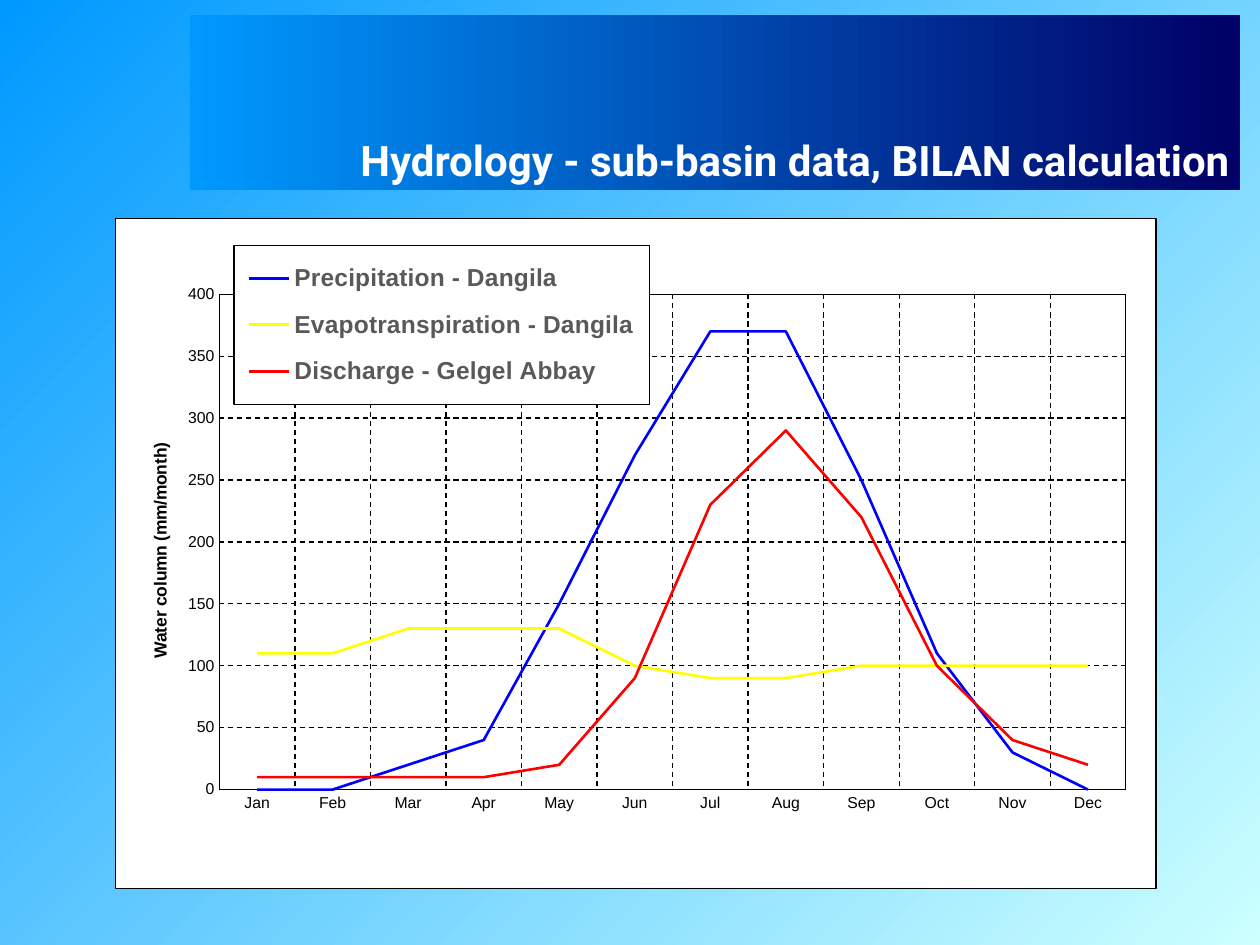
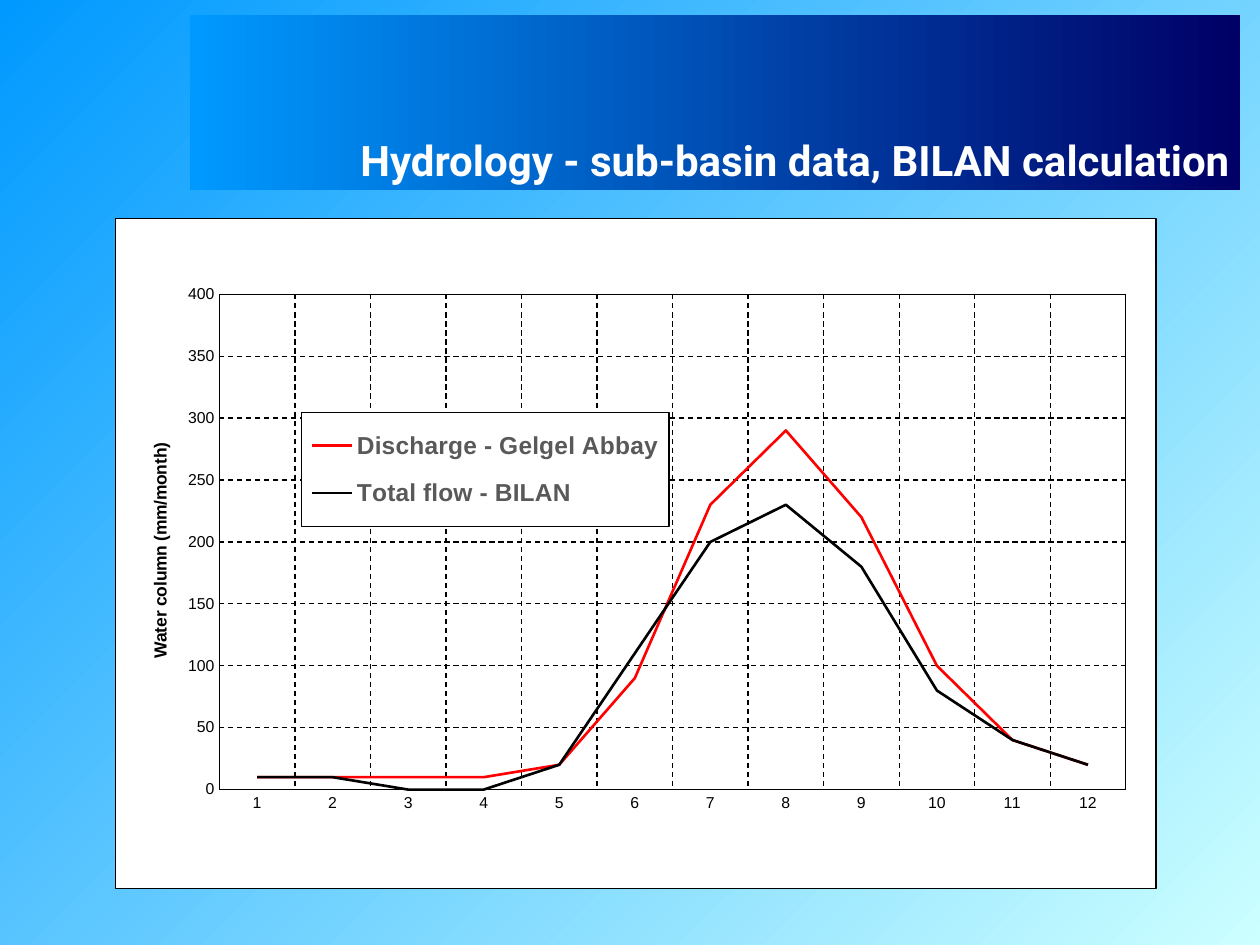
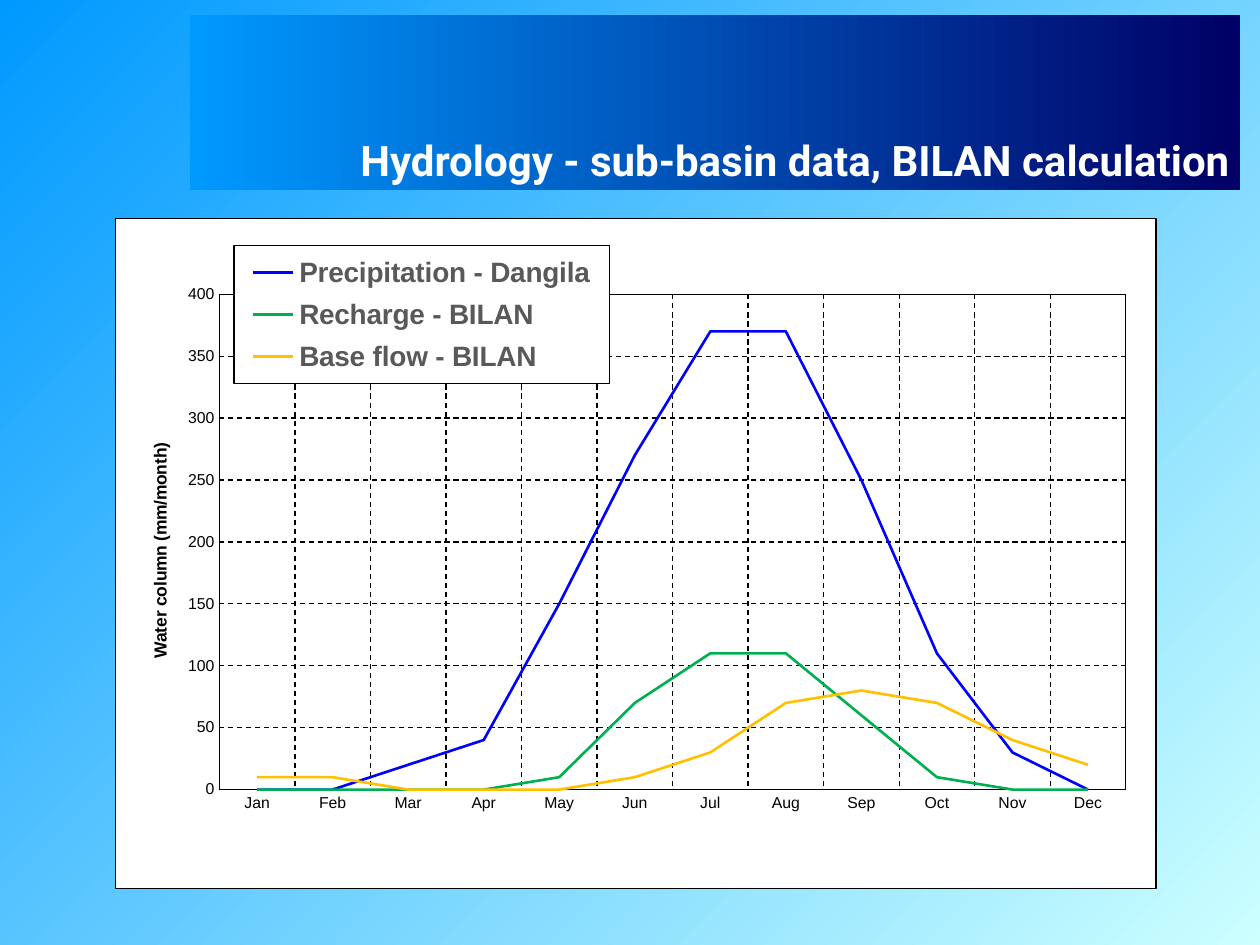
from dataclasses import dataclass

from pptx import Presentation
from pptx.chart.data import CategoryChartData
from pptx.dml.color import RGBColor
from pptx.enum.chart import XL_CHART_TYPE, XL_LEGEND_POSITION, XL_TICK_MARK
from pptx.enum.dml import MSO_LINE
from pptx.enum.shapes import MSO_SHAPE
from pptx.enum.text import MSO_ANCHOR, PP_ALIGN
from pptx.oxml import parse_xml
from pptx.oxml.ns import nsdecls
from pptx.util import Pt

LINE_CHART = XL_CHART_TYPE.LINE
LEGEND_BOTTOM = XL_LEGEND_POSITION.BOTTOM
NO_TICK = XL_TICK_MARK.NONE
DASH = MSO_LINE.DASH
RECT = MSO_SHAPE.RECTANGLE
BOTTOM = MSO_ANCHOR.BOTTOM
RIGHT = PP_ALIGN.RIGHT

NS = {"c": "http://schemas.openxmlformats.org/drawingml/2006/chart",
      "a": "http://schemas.openxmlformats.org/drawingml/2006/main"}


@dataclass(frozen=True)
class Theme:
    sky: str = "0099FF"
    pale: str = "CCFFFF"
    navy: str = "000066"
    white: str = "FFFFFF"
    black: str = "000000"
    legend_text: str = "595959"
    title_font: str = "Roboto"
    chart_font: str = "Arial"
    title_size: float = 24
    chart_size: float = 10
    axis_size: float = 9
    thin: float = 0.75
    series_line: float = 1.5


T = Theme()

TITLE = "Hydrology - sub-basin data, BILAN calculation"
VALUE_TITLE = "Water column (mm/month)"
MONTHS = ["Jan", "Feb", "Mar", "Apr", "May", "Jun",
          "Jul", "Aug", "Sep", "Oct", "Nov", "Dec"]
MONTH_NUMBERS = [str(n) for n in range(1, 13)]

# name, colour, monthly values
PRECIPITATION = ("Precipitation - Dangila", "0000FF",
                 [0, 0, 20, 40, 150, 270, 370, 370, 250, 110, 30, 0])
EVAPOTRANSPIRATION = ("Evapotranspiration - Dangila", "FFFF00",
                      [110, 110, 130, 130, 130, 100, 90, 90, 100, 100, 100, 100])
DISCHARGE = ("Discharge - Gelgel Abbay", "FF0000",
             [10, 10, 10, 10, 20, 90, 230, 290, 220, 100, 40, 20])
TOTAL_FLOW = ("Total flow - BILAN", "000000",
              [10, 10, 0, 0, 20, 110, 200, 230, 180, 80, 40, 20])
RECHARGE = ("Recharge - BILAN", "00B050",
            [0, 0, 0, 0, 10, 70, 110, 110, 60, 10, 0, 0])
BASE_FLOW = ("Base flow - BILAN", "FFC000",
             [10, 10, 0, 0, 0, 10, 30, 70, 80, 70, 40, 20])

# legend boxes are fractions of the chart: left, top, width, height
SLIDES = [
    dict(cats=MONTHS, series=[PRECIPITATION, EVAPOTRANSPIRATION, DISCHARGE],
         legend=(0.114, 0.04, 0.399, 0.237), legend_size=14),
    dict(cats=MONTH_NUMBERS, series=[DISCHARGE, TOTAL_FLOW],
         legend=(0.179, 0.289, 0.353, 0.17), legend_size=14),
    dict(cats=MONTHS, series=[PRECIPITATION, RECHARGE, BASE_FLOW],
         legend=(0.114, 0.04, 0.361, 0.206), legend_size=16),
]

SLIDE_SIZE = (720, 540)
BAND = (108.72, 8.64, 599.76, 100.08)
BAND_INSETS = (5.76, 8.64, 5.76, 2.88)
CHART = (65.52, 124.56, 595.44, 383.76)
PLOT = (0.1, 0.113, 0.871, 0.739)
VALUE_TITLE_AT = (0.029, 0.33)


def pts(values):
    return [Pt(v) for v in values]


def rgb(color):
    return RGBColor.from_string(color)


def style_font(font, size, color, name, bold=False):
    font.size, font.bold, font.name = Pt(size), bold, name
    font.color.rgb = rgb(color)


def set_gradient(fill, start, end, angle):
    """Fill with two colours; the angle runs counter-clockwise."""
    fill.gradient()
    fill.gradient_angle = angle
    for stop, color in zip(fill.gradient_stops, (start, end)):
        stop.color.rgb = rgb(color)


def set_layout(parent, box, after=None, inner=False):
    """Place a chart part by hand, as fractions of the chart."""
    old = parent.find("c:layout", NS)
    if old is not None:
        parent.remove(old)
    target = '<c:layoutTarget val="inner"/>' if inner else ""
    modes = "".join(f'<c:{k}Mode val="edge"/>' for k in "xy")
    sizes = "".join(f'<c:{k} val="{v}"/>' for k, v in zip("xywh", box))
    layout = parse_xml(f'<c:layout {nsdecls("c")}><c:manualLayout>{target}{modes}{sizes}'
                       '</c:manualLayout></c:layout>')
    if after is None:
        parent.insert(0, layout)
    else:
        parent.find(after, NS).addnext(layout)


def frame_xml(fill):
    """Shape properties with a thin black outline."""
    paint = f'<a:solidFill><a:srgbClr val="{fill}"/></a:solidFill>' if fill else "<a:noFill/>"
    return parse_xml(f'<c:spPr {nsdecls("c", "a")}>{paint}<a:ln w="{Pt(T.thin)}"><a:solidFill>'
                     f'<a:srgbClr val="{T.black}"/></a:solidFill></a:ln></c:spPr>')


def style_axis(axis):
    axis.major_tick_mark = axis.minor_tick_mark = NO_TICK
    axis.has_major_gridlines = True
    style_font(axis.tick_labels.font, T.axis_size, T.black, T.chart_font)
    grid = axis.major_gridlines.format.line
    for line in (axis.format.line, grid):
        line.color.rgb = rgb(T.black)
        line.width = Pt(T.thin)
    grid.dash_style = DASH


def add_band(s):
    sp = s.shapes.add_shape(RECT, *pts(BAND))
    sp.shadow.inherit = False
    sp.line.fill.background()
    set_gradient(sp.fill, T.sky, T.navy, 0)
    tf = sp.text_frame
    tf.word_wrap = True
    tf.vertical_anchor = BOTTOM
    tf.margin_left, tf.margin_top, tf.margin_right, tf.margin_bottom = pts(BAND_INSETS)
    tf.text = TITLE
    p = tf.paragraphs[0]
    p.alignment = RIGHT
    style_font(p.runs[0].font, T.title_size, T.white, T.title_font, bold=True)


def add_flow_chart(s, cats, series, legend, legend_size):
    data = CategoryChartData(number_format="0")
    data.categories = cats
    for name, _, values in series:
        data.add_series(name, values)
    chart = s.shapes.add_chart(LINE_CHART, *pts(CHART), data).chart
    chart.has_title = False
    style_font(chart.font, T.chart_size, T.black, T.chart_font)

    plot = chart.plots[0]
    plot.vary_by_categories = False
    for line_series, (_, color, _) in zip(plot.series, series):
        line_series.smooth = False
        line_series.format.line.color.rgb = rgb(color)
        line_series.format.line.width = Pt(T.series_line)

    value_axis = chart.value_axis
    style_axis(chart.category_axis)
    style_axis(value_axis)
    value_axis.minimum_scale, value_axis.maximum_scale = 0, 400
    value_axis.major_unit = 50
    value_axis.tick_labels.number_format = "0"
    value_axis.tick_labels.number_format_is_linked = False
    tf = value_axis.axis_title.text_frame
    tf.text = VALUE_TITLE
    style_font(tf.paragraphs[0].runs[0].font, T.chart_size, T.black, T.chart_font, bold=True)

    chart.has_legend = True
    chart.legend.position = LEGEND_BOTTOM
    chart.legend.include_in_layout = False
    style_font(chart.legend.font, legend_size, T.legend_text, T.chart_font, bold=True)

    root = chart.element
    if root.find("c:roundedCorners", NS) is None:
        root.find("c:date1904", NS).addnext(
            parse_xml(f'<c:roundedCorners {nsdecls("c")} val="0"/>'))
    root.find("c:chart", NS).addnext(frame_xml(T.white))
    plot_area = root.find(".//c:plotArea", NS)
    set_layout(plot_area, PLOT, inner=True)
    plot_area.append(frame_xml(None))
    title = root.find(".//c:valAx/c:title", NS)
    set_layout(title, VALUE_TITLE_AT, after="c:tx")
    body = title.find(".//a:bodyPr", NS)
    body.set("rot", "-5400000")
    body.set("vert", "horz")
    legend_box = root.find(".//c:legend", NS)
    set_layout(legend_box, legend, after="c:legendPos")
    legend_box.find("c:overlay", NS).addnext(frame_xml(T.white))


def main():
    prs = Presentation()
    prs.slide_width, prs.slide_height = pts(SLIDE_SIZE)
    for content in SLIDES:
        s = prs.slides.add_slide(prs.slide_layouts[6])
        set_gradient(s.background.fill, T.sky, T.pale, 315)
        add_band(s)
        add_flow_chart(s, **content)
    prs.save("out.pptx")


if __name__ == "__main__":
    main()
